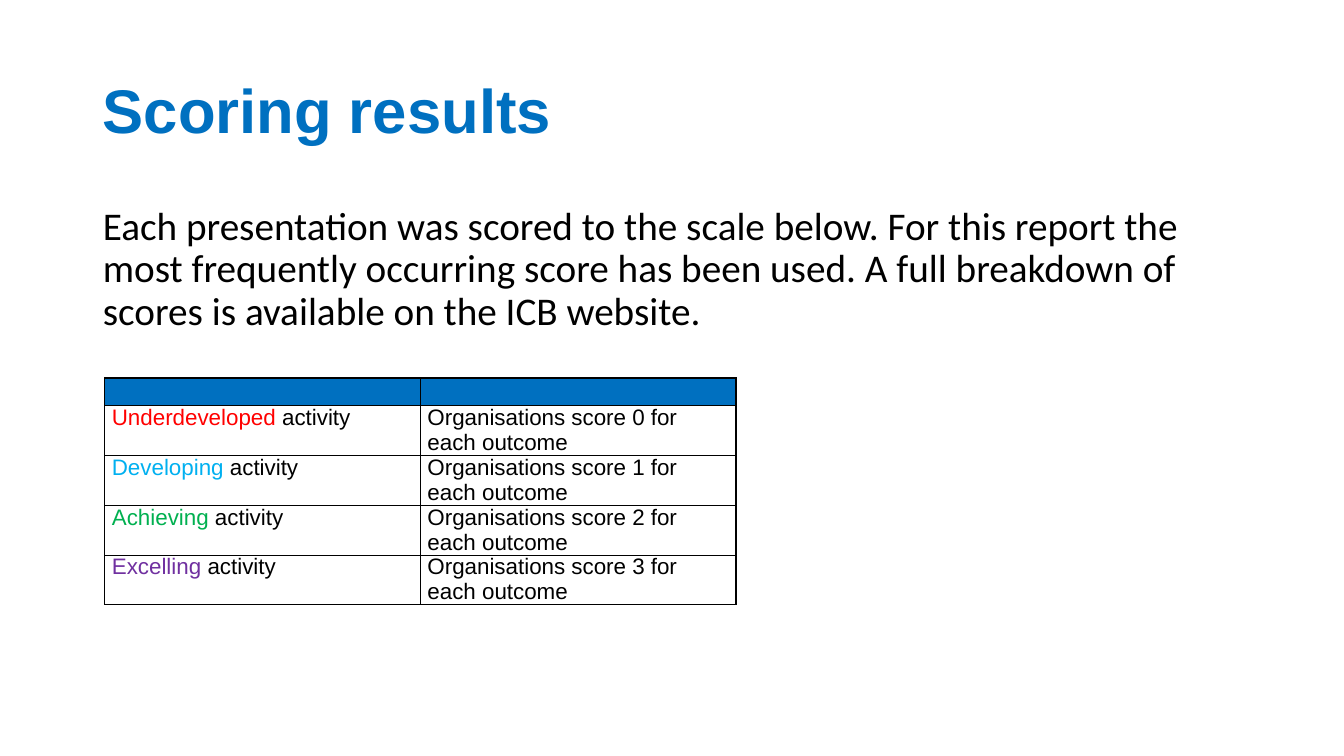
from lxml import etree
from pptx import Presentation
from pptx.dml.color import RGBColor
from pptx.enum.text import MSO_ANCHOR, MSO_AUTO_SIZE, PP_ALIGN
from pptx.oxml.ns import qn
from pptx.util import Inches, Pt

LEFT = PP_ALIGN.LEFT
TOP, MIDDLE = MSO_ANCHOR.TOP, MSO_ANCHOR.MIDDLE
NO_FIT = MSO_AUTO_SIZE.NONE
TITLE_AND_CONTENT = 1

COLORS = {
    "blue": "0070C0", "black": "000000", "white": "FFFFFF", "red": "FF0000",
    "sky": "00B0F0", "green": "00B050", "purple": "7030A0",
}
LEVELS = [("Underdeveloped", "red"), ("Developing", "sky"),
          ("Achieving", "green"), ("Excelling", "purple")]
COLUMN_WIDTH = 3.13
HEADER_HEIGHT, ROW_HEIGHT = 0.25, 0.49
CELL_SIZE = 16
THICK, THIN = 1, 0.5


def color(name):
    return RGBColor.from_string(COLORS[name])


def add_span(para, text, size, font, color_name, bold=False):
    span = para.add_run()
    span.text = text
    span.font.size = Pt(size)
    span.font.name = font
    span.font.bold = bold
    span.font.color.rgb = color(color_name)


def fill_placeholder(box, bounds, anchor, text, size, font, color_name, bold=False):
    box.left, box.top, box.width, box.height = (Inches(n) for n in bounds)
    frame = box.text_frame
    frame.word_wrap = True
    frame.auto_size = NO_FIT
    frame.vertical_anchor = anchor
    para = frame.paragraphs[0]
    para.alignment = LEFT
    para.line_spacing = 0.9
    para.space_before = Pt(0)
    # Plain paragraph without bullet or hanging indent
    properties = para._p.get_or_add_pPr()
    properties.set("marL", "0")
    properties.set("indent", "0")
    etree.SubElement(properties, qn("a:buNone"))
    add_span(para, text, size, font, color_name, bold)


def set_borders(cell, widths):
    properties = cell._tc.get_or_add_tcPr()
    for index, (side, width) in enumerate(zip("LRTB", widths)):
        line = etree.Element(qn(f"a:ln{side}"), w=str(Pt(width)))
        solid = etree.SubElement(line, qn("a:solidFill"))
        etree.SubElement(solid, qn("a:srgbClr"), val=COLORS["black"])
        properties.insert(index, line)


def format_cell(cell, fill_name, borders):
    cell.margin_left = cell.margin_right = Inches(0.07)
    cell.margin_top = cell.margin_bottom = 0
    cell.fill.solid()
    cell.fill.fore_color.rgb = color(fill_name)
    set_borders(cell, borders)


def add_score_table(page):
    rows, columns = len(LEVELS) + 1, 2
    height = HEADER_HEIGHT + ROW_HEIGHT * len(LEVELS)
    table = page.shapes.add_table(rows, columns, Inches(1.04), Inches(3.75),
                                  Inches(COLUMN_WIDTH * columns), Inches(height)).table
    table.horz_banding = False
    for column in table.columns:
        column.width = Inches(COLUMN_WIDTH)
    for r, row in enumerate(table.rows):
        row.height = Inches(ROW_HEIGHT if r else HEADER_HEIGHT)
        for c, cell in enumerate(row.cells):
            borders = (THIN if c else THICK,
                       THICK if c == columns - 1 else THIN,
                       THICK if r < 2 else THIN,
                       THICK if r in (0, rows - 1) else THIN)
            format_cell(cell, "white" if r else "blue", borders)

    # The empty header keeps the text size of the rows below
    for cell in table.rows[0].cells:
        para = cell.text_frame.paragraphs[0]
        etree.SubElement(para._p, qn("a:endParaRPr"), sz=str(CELL_SIZE * 100))

    # One row per level of activity
    for score, (level, level_color) in enumerate(LEVELS):
        name, meaning = (table.cell(score + 1, c).text_frame.paragraphs[0]
                         for c in range(columns))
        add_span(name, level, CELL_SIZE, "Arial", level_color)
        add_span(name, " activity", CELL_SIZE, "Arial", "black")
        add_span(meaning, f"Organisations score {score} for each outcome",
                 CELL_SIZE, "Arial", "black")


def main():
    deck = Presentation()
    deck.slide_width, deck.slide_height = Inches(13.33), Inches(7.5)
    page = deck.slides.add_slide(deck.slide_layouts[TITLE_AND_CONTENT])

    # Title and introduction
    fill_placeholder(page.shapes.title, (0.92, 0.4, 11.5, 1.45), MIDDLE,
                     "Scoring results", 44, "Arial", "blue", bold=True)
    fill_placeholder(page.placeholders[1], (0.92, 2, 11.5, 4.76), TOP,
                     "Each presentation was scored to the scale below. For this report "
                     "the most frequently occurring score has been used. A full breakdown "
                     "of scores is available on the ICB website.", 28, "Calibri", "black")

    # Scoring scale
    add_score_table(page)
    deck.save("out.pptx")


if __name__ == "__main__":
    main()
